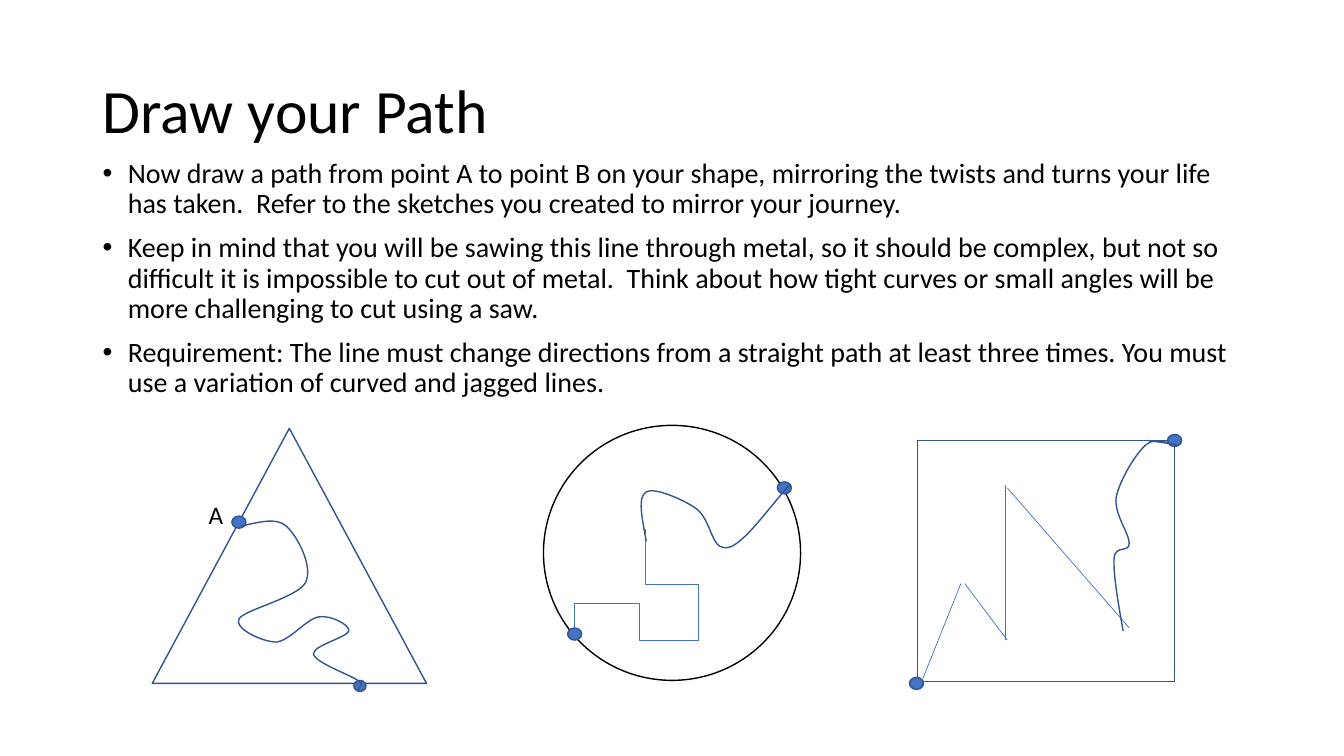
import pptx
import pptx.util
import pptx.dml.color
import pptx.enum.shapes
import pptx.enum.text
import pptx.oxml.ns
import lxml.etree

Inches = pptx.util.Inches
Shapes = pptx.enum.shapes.MSO_SHAPE
Connectors = pptx.enum.shapes.MSO_CONNECTOR
Anchor = pptx.enum.text.MSO_ANCHOR
qn = pptx.oxml.ns.qn

BLUE, DARK_BLUE, BLACK, WHITE = "4472C4", "325491", "000000", "FFFFFF"
DOT_SIZE = (0.14, 0.12)

BULLETS = [
    "Now draw a path from point A to point B on your shape, mirroring the twists and turns "
    "your life has taken.  Refer to the sketches you created to mirror your journey.",
    "Keep in mind that you will be sawing this line through metal, so it should be complex, "
    "but not so difficult it is impossible to cut out of metal.  Think about how tight curves "
    "or small angles will be more challenging to cut using a saw.",
    "Requirement: The line must change directions from a straight path at least three times. "
    "You must use a variation of curved and jagged lines.",
]

# Curves: a start point, then two handles and an end point per segment
TRIANGLE_CURVE = [
    (0.88, 0.97),
    (1.06, 0.93), (1.23, 0.88), (1.33, 0.97),
    (1.44, 1.07), (1.6, 1.37), (1.52, 1.53),
    (1.44, 1.68), (0.91, 1.8), (0.86, 1.89),
    (0.81, 1.99), (1.1, 2.12), (1.23, 2.12),
    (1.36, 2.11), (1.53, 1.89), (1.65, 1.87),
    (1.77, 1.85), (1.96, 1.95), (1.95, 2.01),
    (1.94, 2.07), (1.58, 2.16), (1.6, 2.24),
    (1.61, 2.32), (1.97, 2.45), (2.04, 2.5),
    (2.12, 2.55), (2.04, 2.57), (2.04, 2.59),
]
CIRCLE_CURVE = [
    (1.02, 1.15),
    (0.98, 0.93), (0.93, 0.71), (1.02, 0.66),
    (1.1, 0.61), (1.4, 0.74), (1.52, 0.83),
    (1.64, 0.92), (1.67, 1.16), (1.75, 1.2),
    (1.84, 1.24), (1.9, 1.19), (2, 1.1),
    (2.11, 1), (2.33, 0.71), (2.4, 0.64),
    (2.47, 0.56), (2.44, 0.59), (2.41, 0.62),
]
SQUARE_CURVE = [
    (2.04, 1.89),
    (1.99, 1.61), (1.94, 1.32), (1.95, 1.17),
    (1.96, 1.03), (2.1, 1.12), (2.1, 1.02),
    (2.1, 0.92), (1.95, 0.73), (1.97, 0.57),
    (2, 0.4), (2.17, 0.12), (2.27, 0.04),
    (2.37, -0.05), (2.57, 0.06), (2.57, 0.05),
    (2.57, 0.04), (2.43, 0.02), (2.29, 0),
]
SQUARE_ZIGZAG = [
    ((0.05, 2.37), (0.43, 1.42)),
    ((0.47, 1.42), (0.89, 1.98)),
    ((0.87, 1.98), (0.87, 0.44)),
    ((0.89, 0.47), (2.1, 1.86)),
]


def color(hex_value):
    return pptx.dml.color.RGBColor.from_string(hex_value)


def set_attributes(target, values):
    for name, value in values.items():
        setattr(target, name, value)


def place(box, point):
    return Inches(box[0] + point[0]), Inches(box[1] + point[1])


def style_line(shape, line_color, width):
    shape.line.color.rgb = color(line_color)
    shape.line.width = pptx.util.Pt(width)


def add_text(slide, box, texts, size, anchor=Anchor.TOP, paragraph_format=None, bullet=None):
    text_box = slide.shapes.add_textbox(*map(Inches, box))
    frame = text_box.text_frame
    set_attributes(frame, {"word_wrap": True, "vertical_anchor": anchor})
    for index, text in enumerate(texts):
        paragraph = frame.paragraphs[0] if index == 0 else frame.add_paragraph()
        set_attributes(paragraph, paragraph_format or {})
        run = paragraph.add_run()
        run.text = text
        set_attributes(run.font, {"name": "Calibri", "size": pptx.util.Pt(size)})
        run.font.color.rgb = color(BLACK)
        if bullet:
            properties = paragraph._p.get_or_add_pPr()
            properties.set("marL", str(Inches(0.25)))
            properties.set("indent", str(Inches(-0.25)))
            lxml.etree.SubElement(properties, qn("a:buFont")).set("typeface", "Arial")
            lxml.etree.SubElement(properties, qn("a:buChar")).set("char", bullet)


def add_outline(slide, box, kind, line_color=DARK_BLUE, fill=WHITE):
    shape = slide.shapes.add_shape(kind, *map(Inches, box))
    shape.shadow.inherit = False
    shape.fill.solid()
    shape.fill.fore_color.rgb = color(fill)
    style_line(shape, line_color, 1)


def add_dot(slide, box, point, size=DOT_SIZE):
    dot_box = (box[0] + point[0], box[1] + point[1], *size)
    add_outline(slide, dot_box, Shapes.FLOWCHART_CONNECTOR, fill=BLUE)


def add_curve(slide, box, points):
    corners = [place(box, point) for point in points]
    builder = slide.shapes.build_freeform(*corners[0], scale=1.0)
    builder.add_line_segments(corners[1:], close=False)
    shape = builder.convert_to_shape()
    shape.shadow.inherit = False
    shape.fill.background()
    style_line(shape, DARK_BLUE, 1)
    # Join every three line steps into one Bézier step
    steps = list(shape.element.iter(qn("a:lnTo")))
    for start in range(0, len(steps), 3):
        bezier = lxml.etree.Element(qn("a:cubicBezTo"))
        steps[start].addprevious(bezier)
        for step in steps[start:start + 3]:
            bezier.append(step[0])
            step.getparent().remove(step)


def add_thin_line(slide, box, begin, end, kind=Connectors.STRAIGHT):
    connector = slide.shapes.add_connector(kind, *place(box, begin), *place(box, end))
    style_line(connector, BLUE, 0.5)
    lxml.etree.SubElement(connector.element.spPr, qn("a:effectLst"))
    return connector


def add_elbow(slide, box, begin, end, preset, adjustments=()):
    """Add an elbow turned by 270 degrees."""
    properties = add_thin_line(slide, box, begin, end, Connectors.ELBOW).element.spPr
    properties.find(qn("a:xfrm")).set("rot", str(270 * 60000))
    geometry = properties.find(qn("a:prstGeom"))
    geometry.set("prst", preset)
    for number, value in enumerate(adjustments, 1):
        guide = lxml.etree.SubElement(geometry.find(qn("a:avLst")), qn("a:gd"))
        guide.set("name", f"adj{number}")
        guide.set("fmla", f"val {value}")


def add_triangle_example(slide, box):
    add_outline(slide, box, Shapes.ISOSCELES_TRIANGLE)
    add_dot(slide, box, (0.79, 0.87))
    add_dot(slide, box, (2, 2.5), (0.12, 0.11))
    add_text(slide, (box[0] + 0.46, box[1] + 0.65, 0.26, 0.4), ["A"], 18)
    add_curve(slide, box, TRIANGLE_CURVE)


def add_circle_example(slide, box):
    add_outline(slide, box, Shapes.FLOWCHART_CONNECTOR, BLACK)
    for point in [(0.24, 2.01), (2.32, 0.56)]:
        add_dot(slide, box, point)
    add_elbow(slide, box, (0.98, 1.46), (0.86, 2.69), "bentConnector4", (-211100, 53000))
    add_elbow(slide, box, (0.72, 1.84), (1.83, 1.32), "bentConnector3")
    add_curve(slide, box, CIRCLE_CURVE)


def add_square_example(slide, box):
    add_outline(slide, box, Shapes.RECTANGLE)
    for point in [(-0.08, 2.35), (2.48, -0.06)]:
        add_dot(slide, box, point)
    for begin, end in SQUARE_ZIGZAG:
        add_thin_line(slide, box, begin, end)
    add_curve(slide, box, SQUARE_CURVE)


def main():
    presentation = pptx.Presentation()
    set_attributes(presentation, {"slide_width": Inches(13.33), "slide_height": Inches(7.5)})
    slide = presentation.slides.add_slide(presentation.slide_layouts[6])
    # Title and instructions
    add_text(slide, (0.92, 0.4, 11.5, 1.45), ["Draw your Path"], 44, Anchor.MIDDLE,
             {"line_spacing": 0.9})
    add_text(slide, (0.92, 1.53, 11.5, 4.76), BULLETS, 20, bullet="•",
             paragraph_format={"line_spacing": 0.9, "space_before": pptx.util.Pt(10)})
    # Example shapes
    add_triangle_example(slide, (1.51, 4.25, 2.72, 2.53))
    add_circle_example(slide, (5.39, 4.22, 2.55, 2.53))
    add_square_example(slide, (9.1, 4.37, 2.55, 2.39))
    presentation.save("out.pptx")


if __name__ == "__main__":
    main()
